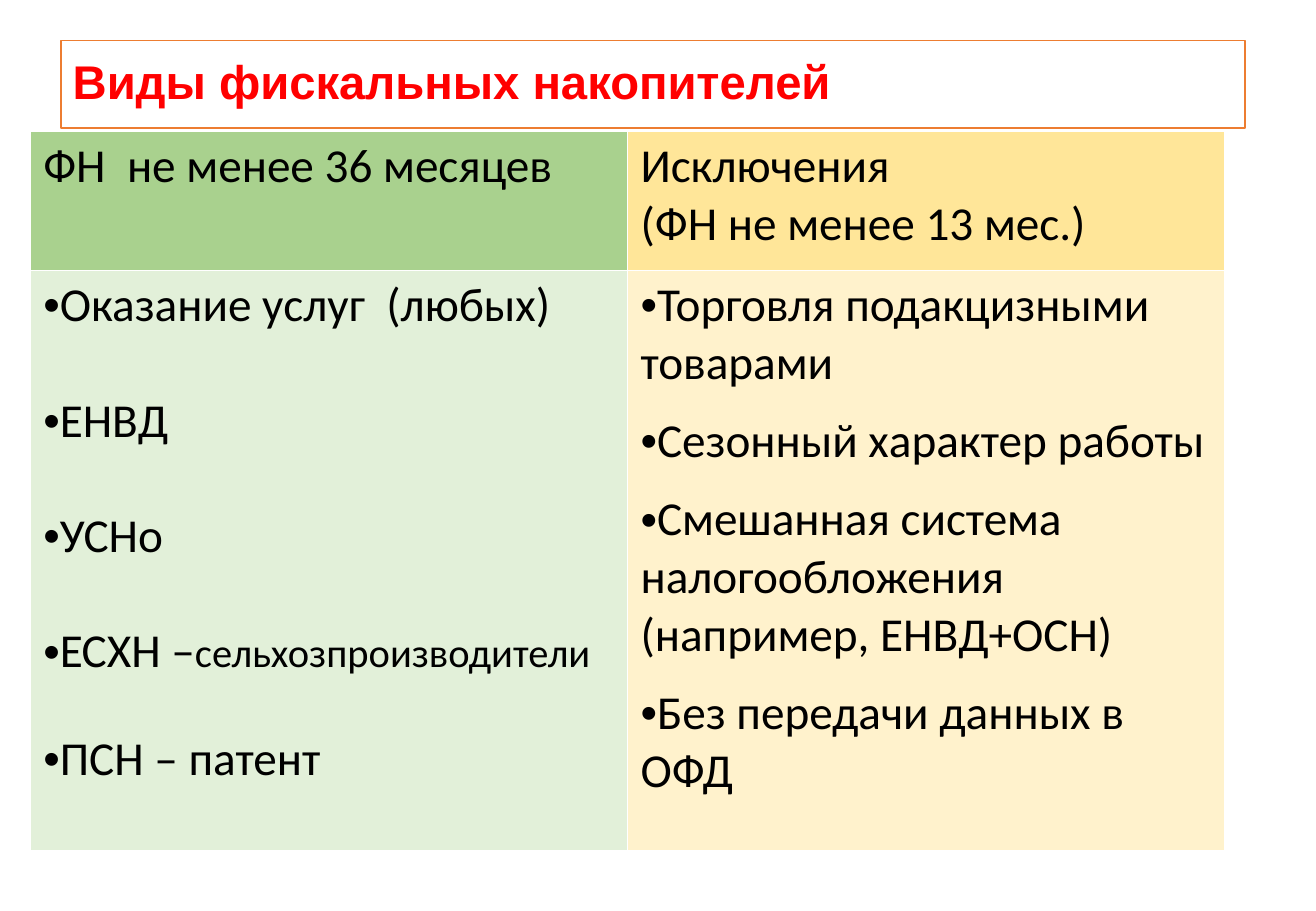
from lxml.etree import SubElement
from pptx import Presentation
from pptx.dml.color import RGBColor
from pptx.enum.shapes import MSO_SHAPE
from pptx.enum.text import MSO_ANCHOR, PP_ALIGN
from pptx.oxml.ns import qn
from pptx.util import Pt

BLACK = RGBColor(0x00, 0x00, 0x00)
WHITE = RGBColor(0xFF, 0xFF, 0xFF)
RED = RGBColor(0xFF, 0x00, 0x00)
ORANGE = RGBColor(0xED, 0x7D, 0x31)
GREEN = RGBColor(0xA9, 0xD1, 0x8E)
MINT = RGBColor(0xE2, 0xF0, 0xD9)
GOLD = RGBColor(0xFF, 0xE6, 0x99)
CREAM = RGBColor(0xFF, 0xF2, 0xCC)

TITLE = "Виды фискальных накопителей"
SIZE = 28
WIDE, MID, TIGHT = 34.2, 29.3, 12.2  # space before a paragraph

# Each paragraph: space before, then runs of (text, size)
HEADS = [
    (GREEN, [(0, [("ФН  не менее 36 месяцев", SIZE)])]),
    (GOLD, [
        (0, [("Исключения", SIZE)]),
        (0, [("(ФН не менее 13 мес.)", SIZE)]),
    ]),
]
LISTS = [
    (MINT, [
        (0, [("Оказание услуг  (любых)", SIZE)]),
        (WIDE, [("ЕНВД", SIZE)]),
        (WIDE, [("УСНо", SIZE)]),
        (WIDE, [("ЕСХН –", SIZE), ("сельхозпроизводители", 24)]),
        (MID, [("ПСН – патент", SIZE)]),
    ]),
    (CREAM, [
        (0, [("Торговля подакцизными товарами", SIZE)]),
        (TIGHT, [("Сезонный характер работы", SIZE)]),
        (TIGHT, [("Смешанная система налогообложения (например, ЕНВД+ОСН)", SIZE)]),
        (TIGHT, [("Без передачи данных в ОФД", SIZE)]),
    ]),
]
HEIGHTS = [82.4, 343.6]
WIDTH = 354


def add_run(para, text, size, font, color, bold=False):
    run = para.add_run()
    run.text = text
    run.font.size = Pt(size)
    run.font.name = font
    run.font.bold = bold
    run.font.color.rgb = color


def add_bullet(para):
    props = para._p.get_or_add_pPr()
    props.set("marL", "0")
    props.set("indent", "0")
    SubElement(props, qn("a:buFont"), typeface="Arial")
    SubElement(props, qn("a:buChar"), char="•")


def add_edges(cell):
    """Draw thin white lines on all four sides; call before the fill is set."""
    props = cell._tc.get_or_add_tcPr()
    for side in ("L", "R", "T", "B"):
        line = SubElement(props, qn(f"a:ln{side}"), w=str(Pt(1)))
        fill = SubElement(line, qn("a:solidFill"))
        SubElement(fill, qn("a:srgbClr"), val=str(WHITE))


def fill_cell(cell, color, paras, listed):
    add_edges(cell)
    cell.fill.solid()
    cell.fill.fore_color.rgb = color
    cell.margin_left = cell.margin_right = Pt(7.7)
    cell.margin_top = cell.margin_bottom = Pt(3.6)
    frame = cell.text_frame
    for i, (gap, runs) in enumerate(paras):
        para = frame.add_paragraph() if i else frame.paragraphs[0]
        if listed:
            add_bullet(para)
        if gap:
            para.space_before = Pt(gap)
        for text, size in runs:
            add_run(para, text, size, "Calibri", BLACK)


def add_title(slide):
    box = slide.shapes.add_shape(MSO_SHAPE.RECTANGLE, Pt(36), Pt(24), Pt(702), Pt(51.8))
    box.shadow.inherit = False
    box.fill.solid()
    box.fill.fore_color.rgb = WHITE
    box.line.color.rgb = ORANGE
    box.line.width = Pt(1)
    frame = box.text_frame
    frame.word_wrap = True
    frame.vertical_anchor = MSO_ANCHOR.MIDDLE
    para = frame.paragraphs[0]
    para.alignment = PP_ALIGN.LEFT
    para.line_spacing = 0.9
    add_run(para, TITLE, SIZE, "Arial", RED, bold=True)


def add_grid(slide):
    frame = slide.shapes.add_table(
        2, 2, Pt(18), Pt(78), Pt(2 * WIDTH), Pt(sum(HEIGHTS)))
    table = frame.table
    table.first_row = table.horz_banding = False
    for col in table.columns:
        col.width = Pt(WIDTH)
    for r, cells in enumerate((HEADS, LISTS)):
        table.rows[r].height = Pt(HEIGHTS[r])
        for c, (color, paras) in enumerate(cells):
            fill_cell(table.cell(r, c), color, paras, listed=r > 0)


def main():
    deck = Presentation()
    deck.slide_width, deck.slide_height = Pt(780), Pt(540)
    slide = deck.slides.add_slide(deck.slide_layouts[6])
    add_title(slide)
    add_grid(slide)
    deck.save("out.pptx")


if __name__ == "__main__":
    main()
